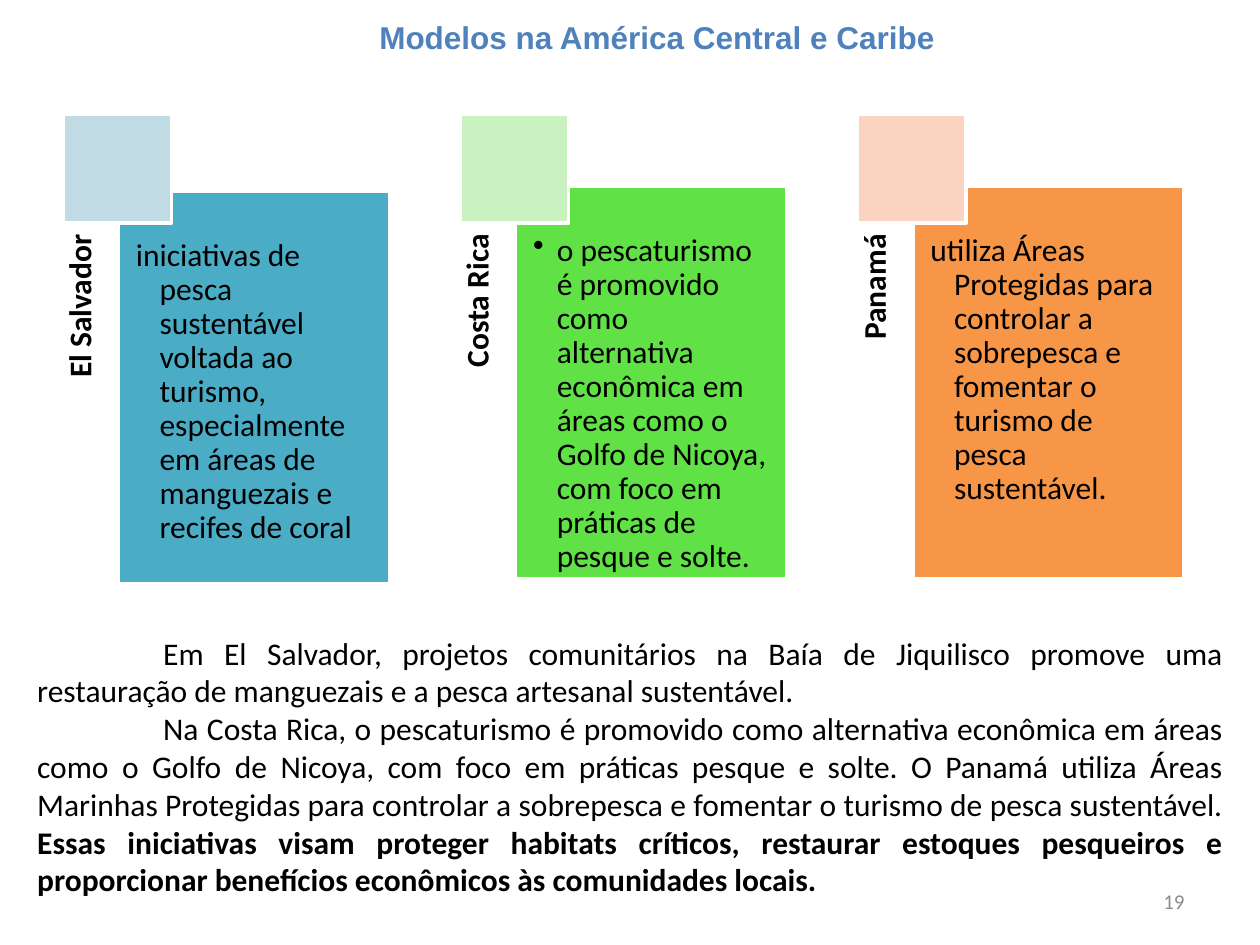
from dataclasses import dataclass

from lxml import etree
from pptx import Presentation
from pptx.dml.color import RGBColor
from pptx.enum.shapes import MSO_SHAPE
from pptx.enum.text import MSO_ANCHOR, MSO_AUTO_SIZE, PP_ALIGN
from pptx.oxml.ns import qn
from pptx.util import Pt

RECTANGLE = MSO_SHAPE.RECTANGLE
LEFT, CENTER, RIGHT, JUSTIFY = PP_ALIGN.LEFT, PP_ALIGN.CENTER, PP_ALIGN.RIGHT, PP_ALIGN.JUSTIFY
TOP, MIDDLE = MSO_ANCHOR.TOP, MSO_ANCHOR.MIDDLE
FIT_SHAPE, NO_FIT = MSO_AUTO_SIZE.SHAPE_TO_FIT_TEXT, MSO_AUTO_SIZE.NONE


@dataclass(frozen=True)
class Theme:
    heading_font: str = "Arial"
    body_font: str = "Calibri"
    body_size: float = 18
    number_size: float = 12
    title: str = "4F81BD"
    text: str = "000000"
    number: str = "8C8C8C"
    outline: str = "FFFFFF"


THEME = Theme()
DEFAULT_INSETS = (7.2, 3.6, 7.2, 3.6)

# country, text, panel colour, square colour, panel offset from card top, bullet
COUNTRIES = [
    ("El Salvador",
     "iniciativas de pesca sustentável voltada ao turismo, especialmente em áreas "
     "de manguezais e recifes de coral", "4BACC6", "C1DBE5", 43.9, None),
    ("Costa Rica",
     "o pescaturismo é promovido como alternativa econômica em áreas como o Golfo "
     "de Nicoya, com foco em práticas de pesque e solte.", "60E146", "CAF1C0", 41, "•"),
    ("Panamá",
     "utiliza Áreas Protegidas para controlar a sobrepesca e fomentar o turismo de "
     "pesca sustentável.", "F79646", "FBD3C1", 41, None),
]

# paragraphs of (text, bold) runs
SUMMARY = [
    [("Em El Salvador, projetos comunitários na Baía de Jiquilisco promove uma "
      "restauração de manguezais e a pesca artesanal sustentável. ", False)],
    [("Na Costa Rica, o pescaturismo é promovido como alternativa econômica em áreas "
      "como o Golfo de Nicoya, com foco em práticas pesque e solte. O Panamá utiliza "
      "Áreas Marinhas Protegidas para controlar a sobrepesca e fomentar o turismo de "
      "pesca sustentável. ", False),
     ("Essas iniciativas visam proteger habitats críticos, restaurar estoques "
      "pesqueiros e proporcionar benefícios econômicos às comunidades locais.", True)],
]


def write_text(shape, text, *, font=THEME.body_font, size=THEME.body_size,
               color=THEME.text, bold=False, align=LEFT, anchor=TOP,
               insets=DEFAULT_INSETS, margin=0, indent=0, bullet=None,
               line_spacing=None, fit=NO_FIT):
    """Fill a shape with a string or with paragraphs of (text, bold) runs."""
    frame = shape.text_frame
    frame.word_wrap = True
    frame.auto_size = fit
    frame.vertical_anchor = anchor
    (frame.margin_left, frame.margin_top,
     frame.margin_right, frame.margin_bottom) = map(Pt, insets)
    paragraphs = [[(text, bold)]] if isinstance(text, str) else text
    for index, runs in enumerate(paragraphs):
        paragraph = frame.add_paragraph() if index else frame.paragraphs[0]
        paragraph.alignment = align
        paragraph.line_spacing = line_spacing
        properties = paragraph._p.get_or_add_pPr()
        properties.set("marL", str(Pt(margin)))
        properties.set("indent", str(Pt(indent)))
        if bullet:
            etree.SubElement(properties, qn("a:buChar")).set("char", bullet)
        for run_text, run_bold in runs:
            run = paragraph.add_run()
            run.text = run_text
            run.font.name = font
            run.font.size = Pt(size)
            run.font.bold = run_bold
            run.font.color.rgb = RGBColor.from_string(color)


def add_text(slide, box, text, **text_format):
    shape = slide.shapes.add_textbox(*map(Pt, box))
    write_text(shape, text, **text_format)
    return shape


def add_rectangle(slide, box, fill):
    shape = slide.shapes.add_shape(RECTANGLE, *map(Pt, box))
    shape.shadow.inherit = False
    shape.fill.solid()
    shape.fill.fore_color.rgb = RGBColor.from_string(fill)
    shape.line.color.rgb = RGBColor.from_string(THEME.outline)
    shape.line.width = Pt(2)
    return shape


def add_card(slide, box, country, text, panel_color, square_color, panel_offset, bullet):
    """Place a vertical country name, a text panel and a corner square."""
    left, top, width, _ = box
    square, panel_width, panel_height, label_height = 62, 154.8, 224, 31
    label_center_x, label_center_y = left + 16.2, top + 153
    label = add_text(
        slide,
        (label_center_x - panel_height / 2, label_center_y - label_height / 2,
         panel_height, label_height),
        country, bold=True, align=RIGHT, insets=(0, 0, 27.4, 0), line_spacing=0.9)
    label.rotation = 270
    panel = add_rectangle(
        slide, (left + width - panel_width, top + panel_offset, panel_width, panel_height),
        panel_color)
    write_text(panel, text, insets=(10, 27.4, 10, 10), margin=13.5, indent=-13.5,
               bullet=bullet, line_spacing=0.9)
    add_rectangle(slide, (left, top, square, square), square_color)


def add_cards(slide, box):
    """Spread the country cards evenly across the box."""
    left, top, width, height = box
    card_width = 186.5
    step = (width - card_width) / (len(COUNTRIES) - 1)
    for index, country in enumerate(COUNTRIES):
        add_card(slide, (left + index * step, top, card_width, height), *country)


def main():
    presentation = Presentation()
    presentation.slide_width, presentation.slide_height = Pt(720), Pt(540)
    slide = presentation.slides.add_slide(presentation.slide_layouts[6])
    add_text(slide, (83, 6.5, 585, 29), "Modelos na América Central e Caribe",
             font=THEME.heading_font, color=THEME.title, bold=True, align=CENTER,
             fit=FIT_SHAPE)
    add_cards(slide, (36, 65.5, 640.5, 268))
    add_text(slide, (14.2, 358.5, 692, 160), SUMMARY, align=JUSTIFY, indent=72,
             fit=FIT_SHAPE)
    add_text(slide, (516, 500.5, 168, 28.75), "19", size=THEME.number_size,
             color=THEME.number, align=RIGHT, anchor=MIDDLE)
    presentation.save("out.pptx")


if __name__ == "__main__":
    main()
